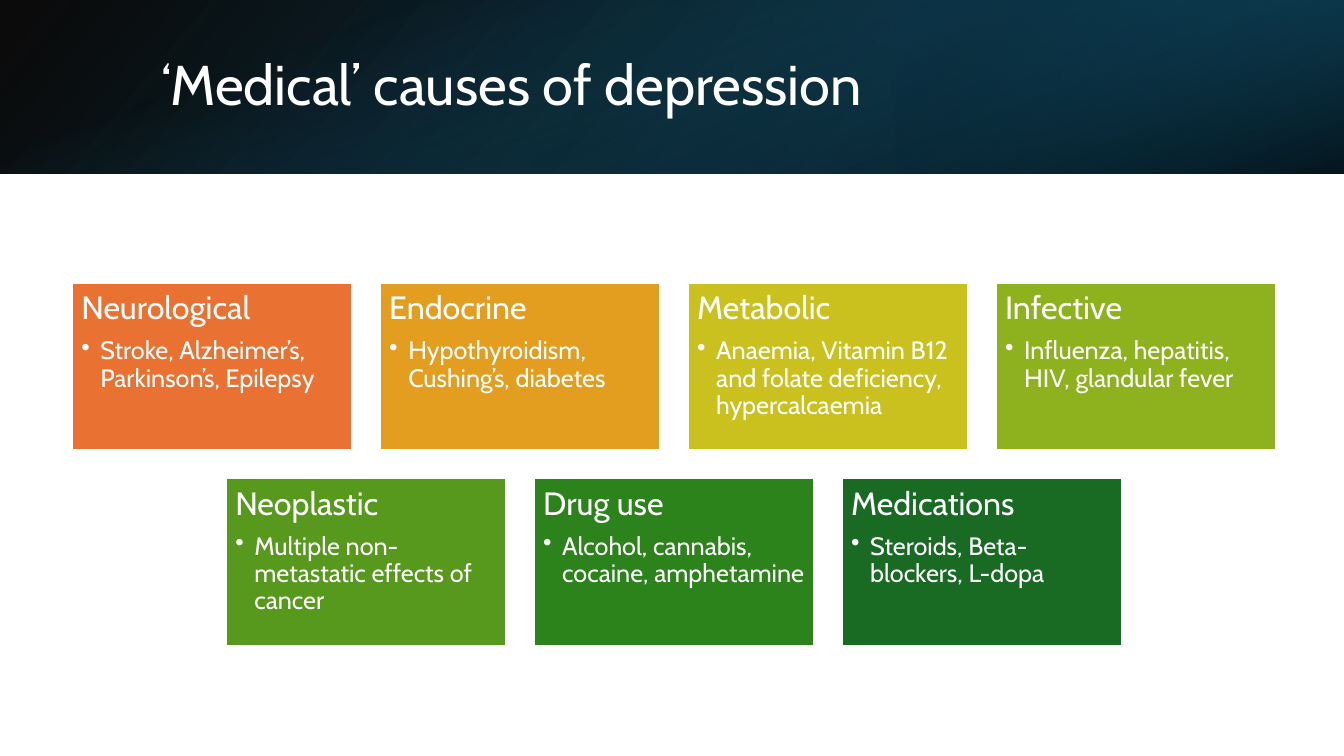
"""Build the slide on medical causes of depression."""
from lxml.etree import SubElement
from pptx import Presentation
from pptx.dml.color import RGBColor
from pptx.enum.shapes import MSO_SHAPE as Shape
from pptx.enum.text import MSO_ANCHOR as Anchor, PP_ALIGN as Align
from pptx.oxml.ns import qn
from pptx.util import Cm, Pt

COLORS = {
    "white": "FFFFFF", "black": "000000", "navy": "0B3041",
    "deep blue": "104862", "blue": "156082",
    "orange": "E97132", "amber": "E39D1F", "yellow": "CBC11E", "lime": "8EB21E",
    "leaf": "56991D", "green": "2C821B", "forest": "196B24",
}
SLIDE_WIDTH, SLIDE_HEIGHT, BAND_HEIGHT = 33.87, 19.05, 4.38
CARD_WIDTH, CARD_HEIGHT, CARD_GAP = 7.06, 4.23, 0.7
CARDS_CENTER, CARDS_TOP = 16.98, 7.12
CARD_ROWS = [
    [("Neurological", "Stroke, Alzheimer’s, Parkinson’s, Epilepsy", "orange"),
     ("Endocrine", "Hypothyroidism, Cushing’s, diabetes", "amber"),
     ("Metabolic", "Anaemia, Vitamin B12 and folate deficiency, hypercalcaemia", "yellow"),
     ("Infective", "Influenza, hepatitis, HIV, glandular fever", "lime")],
    [("Neoplastic", "Multiple non-metastatic effects of cancer", "leaf"),
     ("Drug use", "Alcohol, cannabis, cocaine, amphetamine", "green"),
     ("Medications", "Steroids, Beta-blockers, L-dopa", "forest")],
]


def rgb(name):
    return RGBColor.from_string(COLORS[name])


def write(paragraph, text, size, font="Cabin", color="white", after=0, bullet_indent=0):
    paragraph.alignment = Align.LEFT
    paragraph.line_spacing = 0.9
    paragraph.space_after = Pt(after)
    run = paragraph.add_run()
    run.text = text
    run.font.name, run.font.size = font, Pt(size)
    run.font.color.rgb = rgb(color)
    if bullet_indent:
        paragraph.level = 1
        properties = paragraph._p.get_or_add_pPr()
        properties.set("marL", str(Cm(bullet_indent)))
        properties.set("indent", str(-Cm(bullet_indent)))
        SubElement(properties, qn("a:buChar")).set("char", "•")


class SlideBuilder:
    def __init__(self, slide, inset=0.24):
        self.slide = slide
        self.inset = Cm(inset)

    def rectangle(self, left, top, width, height):
        shape = self.slide.shapes.add_shape(
            Shape.RECTANGLE, Cm(left), Cm(top), Cm(width), Cm(height))
        shape.shadow.inherit = False
        return shape

    def gradient(self, left, top, width, height, stops, angle, rotation=0, flip=False):
        shape = self.rectangle(left, top, width, height)
        shape.line.fill.background()
        shape.rotation = rotation
        if flip:
            shape._element.spPr.find(qn("a:xfrm")).set("flipH", "1")
        shape.fill.gradient()
        shape.fill.gradient_angle = 360 - angle
        for stop, (position, color, _) in zip(shape.fill.gradient_stops, stops):
            stop.position = position / 100
            stop.color.rgb = rgb(color)
        for element, (_, _, opacity) in zip(shape._element.iter(qn("a:srgbClr")), stops):
            SubElement(element, qn("a:alpha")).set("val", str(opacity * 1000))

    def title(self, text, left, top, width, height):
        frame = self.slide.shapes.add_textbox(
            Cm(left), Cm(top), Cm(width), Cm(height)).text_frame
        frame.word_wrap = True
        frame.vertical_anchor = Anchor.MIDDLE
        write(frame.paragraphs[0], text, size=40)

    def card(self, left, top, heading, examples, color):
        shape = self.rectangle(left, top, CARD_WIDTH, CARD_HEIGHT)
        shape.fill.solid()
        shape.fill.fore_color.rgb = rgb(color)
        shape.line.color.rgb = rgb("white")
        shape.line.width = Pt(1.5)
        frame = shape.text_frame
        frame.word_wrap = True
        frame.vertical_anchor = Anchor.TOP
        frame.margin_left = frame.margin_right = self.inset
        frame.margin_top = frame.margin_bottom = self.inset
        write(frame.paragraphs[0], heading, size=23, after=8)
        write(frame.add_paragraph(), examples, size=18, after=3, bullet_indent=0.48)


def main():
    presentation = Presentation()
    presentation.slide_width, presentation.slide_height = Cm(SLIDE_WIDTH), Cm(SLIDE_HEIGHT)
    builder = SlideBuilder(presentation.slides.add_slide(presentation.slide_layouts[6]))

    builder.gradient(0, 0, SLIDE_WIDTH, BAND_HEIGHT,
                     [(0, "black", 96), (100, "deep blue", 100)], angle=140, flip=True)
    builder.gradient(SLIDE_WIDTH * 2 / 3, 0, SLIDE_WIDTH / 3, BAND_HEIGHT,
                     [(19, "navy", 68), (100, "blue", 79)], angle=320, rotation=180, flip=True)
    offset = (SLIDE_WIDTH - BAND_HEIGHT) / 2
    builder.gradient(offset, -offset, BAND_HEIGHT, SLIDE_WIDTH,
                     [(23, "blue", 0), (99, "black", 74)], angle=340, rotation=90)
    builder.title("‘Medical’ causes of depression", 3.81, 0.97, 27.89, 2.44)

    for row, cards in enumerate(CARD_ROWS):
        row_width = len(cards) * (CARD_WIDTH + CARD_GAP) - CARD_GAP
        row_left = CARDS_CENTER - row_width / 2
        top = CARDS_TOP + row * (CARD_HEIGHT + CARD_GAP)
        for column, card in enumerate(cards):
            builder.card(row_left + column * (CARD_WIDTH + CARD_GAP), top, *card)

    presentation.save("out.pptx")


if __name__ == "__main__":
    main()
